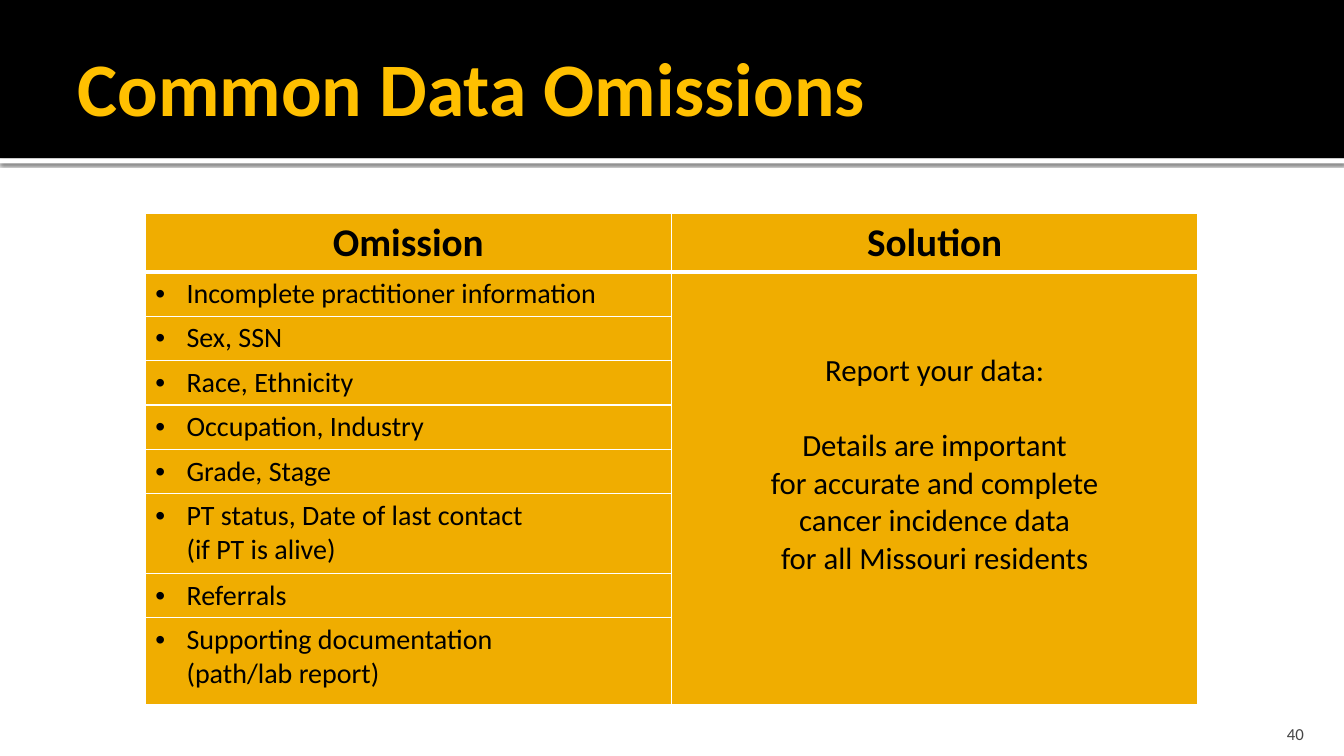
import pptx
import pptx.util
import pptx.dml.color
import pptx.enum.text
import pptx.enum.shapes
import pptx.oxml
import pptx.oxml.ns

Inches, Pt = pptx.util.Inches, pptx.util.Pt
ALIGN = pptx.enum.text.PP_ALIGN
ANCHOR = pptx.enum.text.MSO_ANCHOR
BLACK, WHITE, GOLD, AMBER, GRAY = "000000", "FFFFFF", "F0AD00", "FFC000", "454545"

# Content
TITLE = "Common Data Omissions"
HEADS = ["Omission", "Solution"]
ITEMS = [
    ["Incomplete practitioner information"],
    ["Sex, SSN"],
    ["Race, Ethnicity"],
    ["Occupation, Industry"],
    ["Grade, Stage"],
    ["PT status, Date of last contact", "(if PT is alive)"],
    ["Referrals"],
    ["Supporting documentation", "(path/lab report)"],
]
ADVICE = [
    "Report your data:",
    "Details are important",
    "for accurate and complete",
    "cancer incidence data",
    "for all Missouri residents",
]
NUMBER = "40"

# Measures in inches
WIDE, HIGH = 13.33, 7.5
HEAD_H, ROW_H, PAIR_H, LAST_H = 0.57, 0.44, 0.79, 0.86
COL_W = 5.22
INDENT = 0.31


def color(code):
    return pptx.dml.color.RGBColor.from_string(code)


def node(parent, tag, **attrs):
    item = pptx.oxml.ns.qn("a:" + tag)
    child = parent.makeelement(item, attrs)
    parent.append(child)
    return child


def write(para, text, size, code=BLACK, bold=False, align=ALIGN.LEFT):
    para.alignment = align
    run = para.add_run()
    run.text = text
    run.font.name = "Calibri"
    run.font.size = Pt(size)
    run.font.bold = bold
    run.font.color.rgb = color(code)


def lines(frame, count):
    return [frame.paragraphs[0]] + [frame.add_paragraph() for _ in range(count - 1)]


def pad(frame, left, top, right, bottom):
    frame.margin_left, frame.margin_top = Inches(left), Inches(top)
    frame.margin_right, frame.margin_bottom = Inches(right), Inches(bottom)


def band(slide, top, height, code):
    bar = slide.shapes.add_shape(pptx.enum.shapes.MSO_SHAPE.RECTANGLE,
                                 0, Inches(top), Inches(WIDE), Inches(height))
    bar.fill.solid()
    bar.fill.fore_color.rgb = color(code)
    bar.line.fill.background()
    bar.shadow.inherit = False
    return bar


def shade(bar):
    effects = bar.element.spPr.find(pptx.oxml.ns.qn("a:effectLst"))
    cast = node(effects, "outerShdw", blurRad=str(Pt(2.5)), dist=str(Pt(0.8)),
                dir="5400000", algn="tl", rotWithShape="0")
    node(node(cast, "srgbClr", val=BLACK), "alpha", val="60000")


def paint(cell, head):
    props = cell._tc.get_or_add_tcPr()
    for side in ("lnL", "lnR", "lnT", "lnB"):
        below = head and side == "lnB"
        edge = node(props, side, w=str(Pt(3 if below else 1)))
        node(node(edge, "solidFill"), "srgbClr", val=WHITE)
    cell.fill.solid()
    cell.fill.fore_color.rgb = color(GOLD)


def bullet(para, shown):
    props = para._p.get_or_add_pPr()
    props.set("marL", str(Inches(INDENT)))
    props.set("indent", str(-Inches(INDENT) if shown else 0))
    if shown:
        node(props, "buFont", typeface="Arial")
        node(props, "buChar", char="•")


def main():
    deck = pptx.Presentation()
    deck.slide_width, deck.slide_height = Inches(WIDE), Inches(HIGH)
    slide = deck.slides.add_slide(deck.slide_layouts[5])

    # Header bands, behind the title
    strip = band(slide, 1.57, 0.05, WHITE)
    shade(strip)
    cover = band(slide, 0, 1.57, BLACK)
    title = slide.shapes.title
    for bar in (strip, cover):
        title.element.addprevious(bar.element)

    # Title
    title.left, title.top = Inches(0.67), Inches(0.17)
    title.width, title.height = Inches(12), Inches(1.37)
    frame = title.text_frame
    pad(frame, 0.1, 0.05, 0.05, 0.05)
    frame.vertical_anchor = ANCHOR.MIDDLE
    write(frame.paragraphs[0], TITLE, 54, AMBER, True)

    # Table grid
    tall = [HEAD_H] + [ROW_H if len(item) == 1 else PAIR_H for item in ITEMS]
    tall[-1] = LAST_H
    table = slide.shapes.add_table(len(tall), 2, Inches(1.44), Inches(2.12),
                                   Inches(2 * COL_W), Inches(sum(tall))).table
    for col in table.columns:
        col.width = Inches(COL_W)
    for row, height in zip(table.rows, tall):
        row.height = Inches(height)
    for i in range(len(tall)):
        for j in range(2):
            paint(table.cell(i, j), i == 0)

    # Table text
    for j, head in enumerate(HEADS):
        write(table.cell(0, j).text_frame.paragraphs[0], head, 28, BLACK, True, ALIGN.CENTER)
    for i, item in enumerate(ITEMS, 1):
        paras = lines(table.cell(i, 0).text_frame, len(item))
        for k, (para, text) in enumerate(zip(paras, item)):
            write(para, text, 20)
            bullet(para, k == 0)

    # Merged advice cell
    cell = table.cell(1, 1)
    cell.merge(table.cell(len(ITEMS), 1))
    cell.margin_top = Inches(0.8)
    paras = lines(cell.text_frame, len(ADVICE))
    for para, text in zip(paras, ADVICE):
        write(para, text, 22, align=ALIGN.CENTER)
    paras[0].space_after = Pt(27)

    # Slide number
    box = slide.shapes.add_textbox(Inches(11.96), Inches(7.08), Inches(1.07), Inches(0.3))
    frame = box.text_frame
    frame.word_wrap = True
    frame.vertical_anchor = ANCHOR.BOTTOM
    pad(frame, 0.1, 0.05, 0.1, 0)
    write(frame.paragraphs[0], NUMBER, 12, GRAY, align=ALIGN.RIGHT)

    deck.save("out.pptx")


if __name__ == "__main__":
    main()
